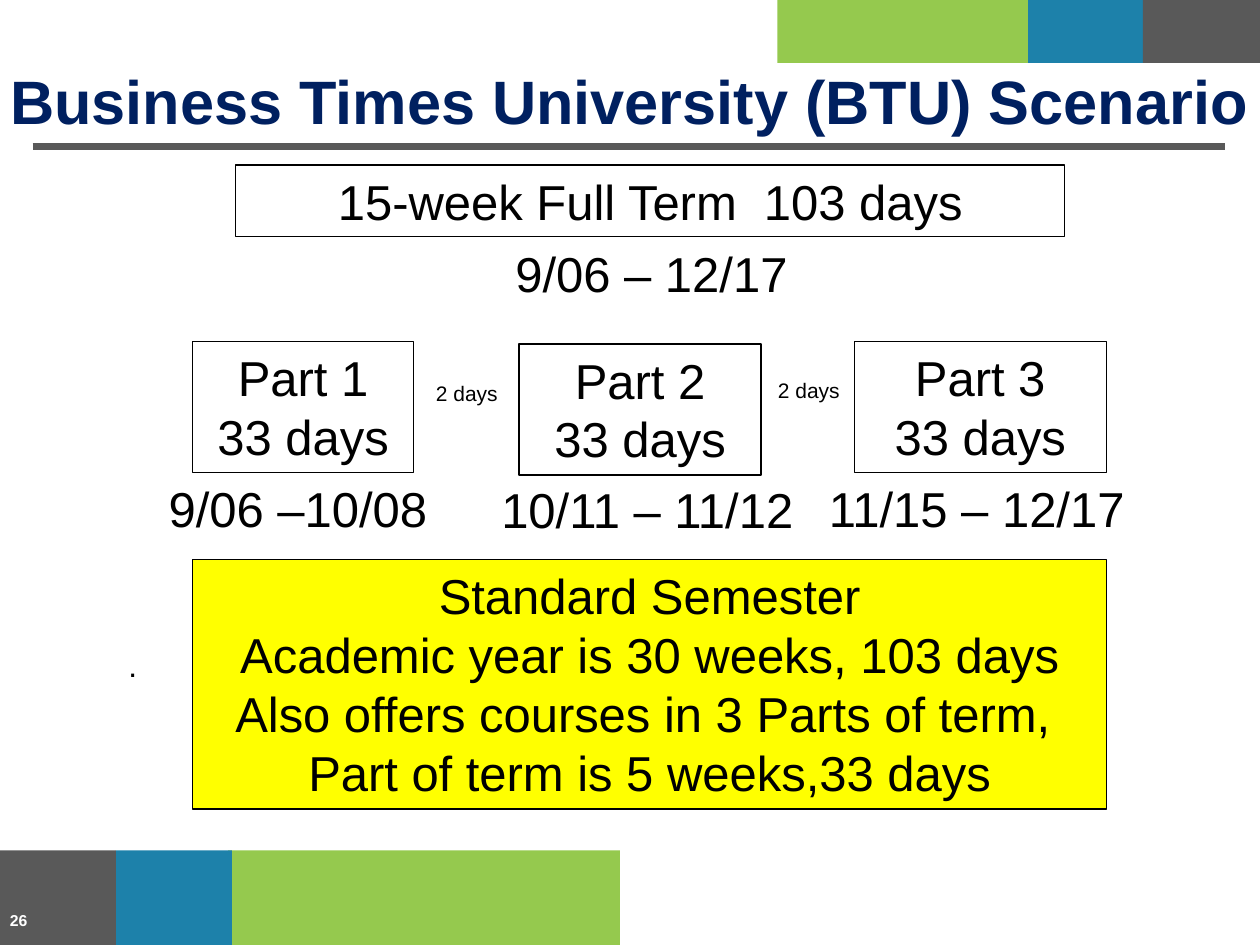
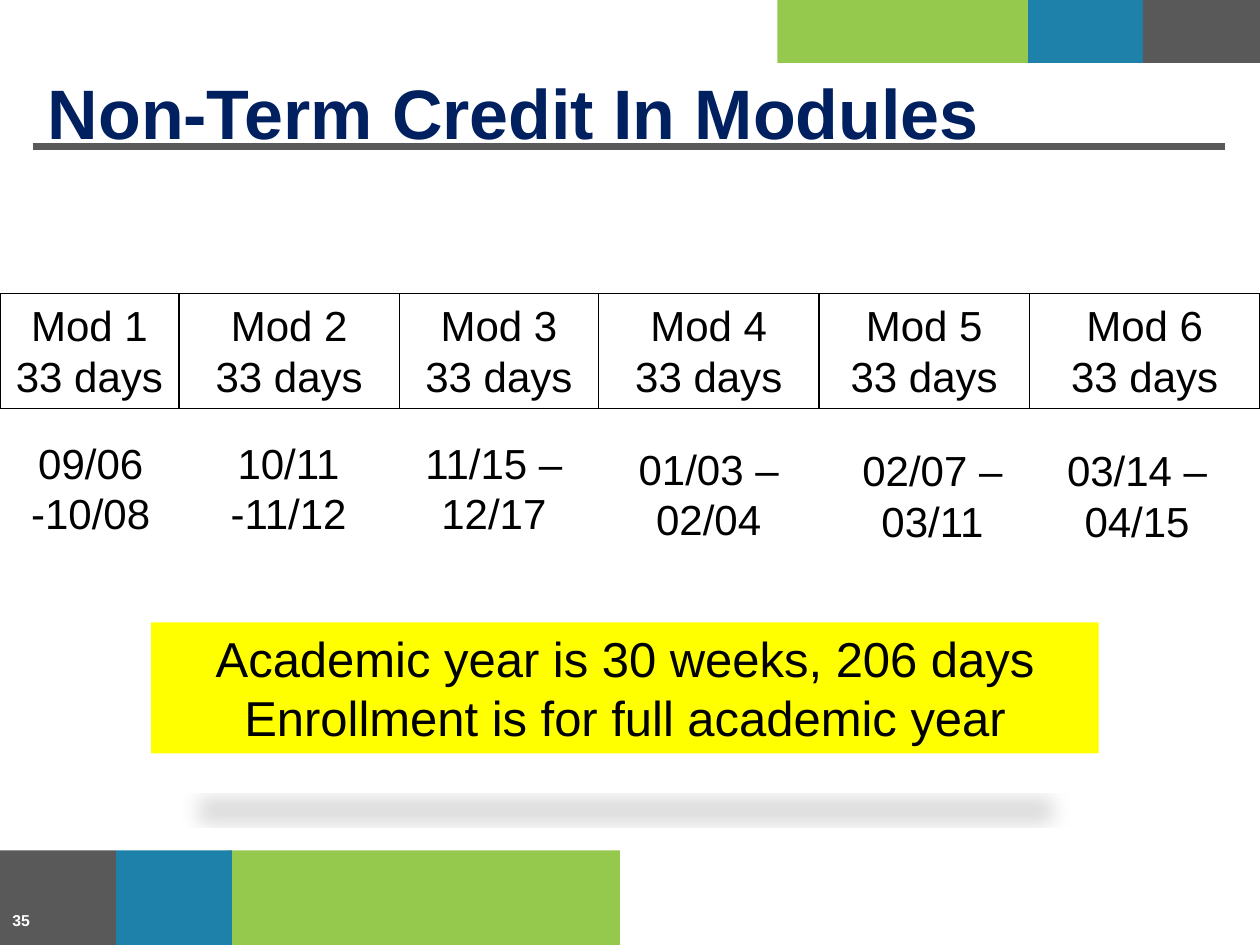
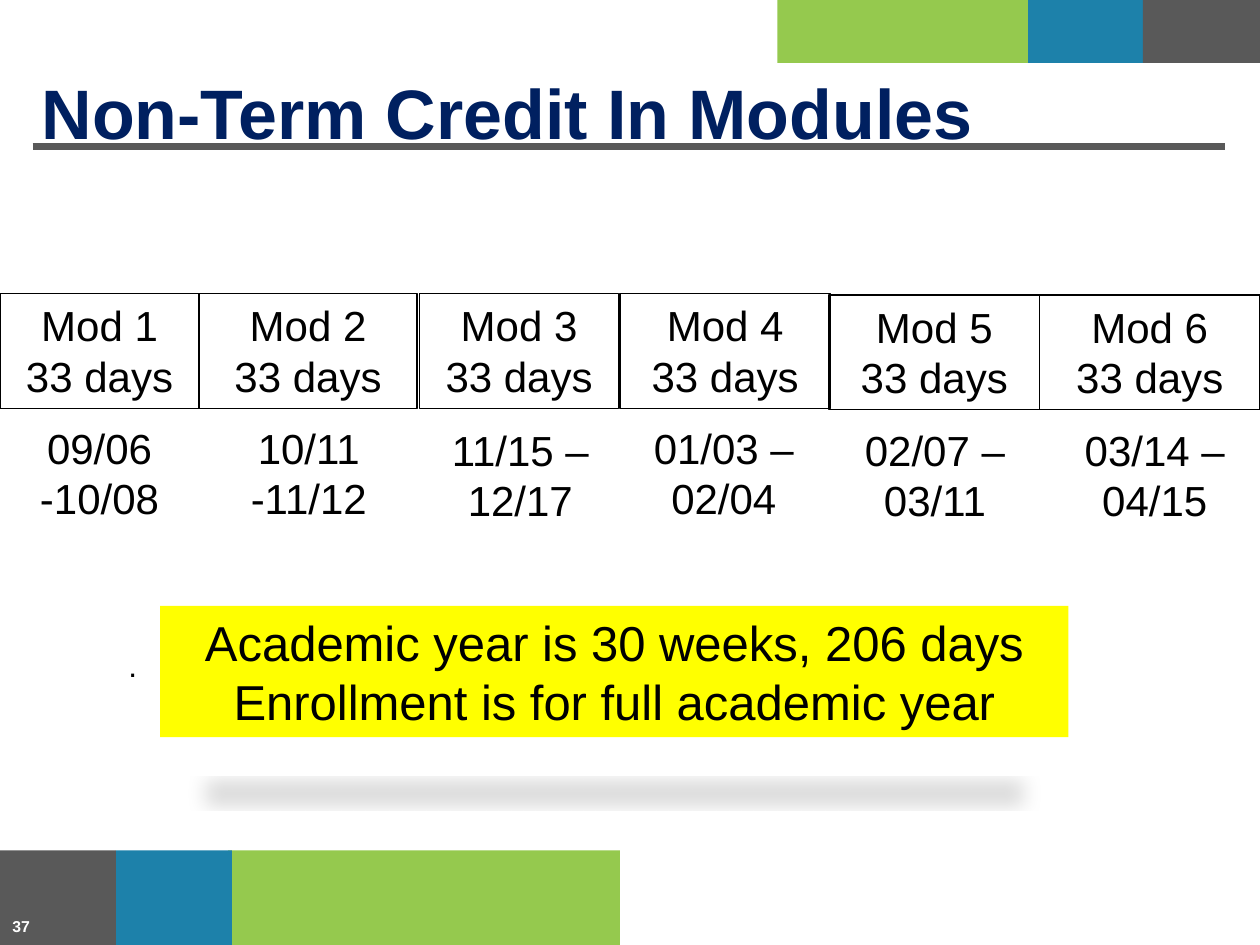
from lxml import etree
from pptx import Presentation
from pptx.dml.color import RGBColor
from pptx.enum import shapes as es, text as et
from pptx.oxml.ns import qn
from pptx.util import Inches, Pt

GREEN = RGBColor(0x95, 0xC9, 0x4E)
BLUE = RGBColor(0x1D, 0x81, 0xAA)
GRAY = RGBColor(0x59, 0x59, 0x59)
NAVY = RGBColor(0x00, 0x20, 0x60)
YELLOW = RGBColor(0xFF, 0xFF, 0x00)
BLACK = RGBColor(0, 0, 0)
WHITE = RGBColor(255, 255, 255)
FONT = "Arial"
PAD, LEAD = 0.1, 1.21  # box padding in inches, line height in font sizes

# Shared bands: left, top, width, height, colour
BANDS = [
    (1.81, 6.75, 3.11, 0.77, GREEN), (0.92, 6.75, 0.92, 0.77, BLUE),
    (-0.02, 6.75, 0.94, 0.77, GRAY), (6.17, 0, 2.02, 0.5, GREEN),
    (8.16, 0, 0.92, 0.5, BLUE), (9.07, 0, 0.94, 0.5, GRAY),
]

# Term scenario: text, left, top, width
PARTS = [
    ("Part 1\n33 days", 1.53, 2.71, 1.75),
    ("Part 2\n33 days", 4.12, 2.73, 1.92),
    ("15-week Full Term  103 days", 1.87, 1.31, 6.58),
    ("Part 3\n33 days", 6.78, 2.71, 2),
]
SPANS = [
    ("9/06 –10/08", 1.24, 3.75, 2.33),
    ("10/11 – 11/12", 3.88, 3.76, 2.58),
    ("11/15 – 12/17", 6.48, 3.75, 2.75),
]
GAPS = [("2 days", 3.29, 2.97, 0.83), ("2 days", 6.06, 2.95, 0.72)]
TERM = ("Standard Semester\nAcademic year is 30 weeks, 103 days\n"
        "Also offers courses in 3 Parts of term, \n"
        "Part of term is 5 weeks,33 days")

# Module slides: dates with their box width, then each slide's layout
DATES = [("09/06 -10/08", 1.42), ("10/11 -11/12", 1.62),
         ("11/15 – 12/17", 1.5), ("01/03 – 02/04", 1.33),
         ("02/07 – 03/11", 1.42), ("03/14 – 04/15", 1.83)]
YEAR = ("Academic year is 30 weeks, 206 days\n"
        "Enrollment is for full academic year")
MODS = [
    dict(page="35", foot=7.1, left=0.28, dot=False, note=(1.2, 4.94, 7.52),
         boxes=[(0, 2.33, 1.42), (1.42, 2.33, 1.75), (3.17, 2.33, 1.58),
                (4.75, 2.33, 1.75), (6.5, 2.33, 1.67), (8.17, 2.33, 1.83)],
         dates=[(0.01, 3.42), (1.48, 3.42), (3.17, 3.42),
                (4.96, 3.47), (6.69, 3.48), (8.11, 3.48)]),
    dict(page="37", foot=7.15, left=0.23, dot=True, note=(1.27, 4.81, 7.21),
         boxes=[(0, 2.33, 1.58), (1.58, 2.33, 1.73), (3.33, 2.33, 1.58),
                (4.92, 2.33, 1.67), (6.58, 2.34, 1.67), (8.25, 2.34, 1.75)],
         dates=[(0.08, 3.3), (1.64, 3.3), (3.38, 3.32),
                (5.08, 3.3), (6.71, 3.32), (8.25, 3.32)]),
]


def style(frame, words, size, color=BLACK, bold=False, align=et.PP_ALIGN.CENTER):
    frame.text = words
    frame.word_wrap = True
    for para in frame.paragraphs:
        para.alignment = align
        for run in para.runs:
            font = run.font
            font.name, font.size, font.bold = FONT, Pt(size), bold
            font.color.rgb = color


def rect(slide, left, top, wide, high, fill=None, line=None):
    box = slide.shapes.add_shape(es.MSO_SHAPE.RECTANGLE, Inches(left),
                                 Inches(top), Inches(wide), Inches(high))
    box.shadow.inherit = False
    if fill is None:
        box.fill.background()
    else:
        box.fill.solid()
        box.fill.fore_color.rgb = fill
    if line is None:
        box.line.fill.background()
    else:
        box.line.color.rgb = line
        box.line.width = Pt(0.75)
    return box


def tall(words, size, rows=None):
    rows = rows or words.count("\n") + 1
    return round(PAD + rows * size * LEAD / 72, 2)


def panel(slide, words, left, top, wide, size, fill=None, line=BLACK):
    box = rect(slide, left, top, wide, tall(words, size), fill, line)
    style(box.text_frame, words, size)
    box.text_frame.vertical_anchor = et.MSO_ANCHOR.TOP
    box.text_frame.auto_size = et.MSO_AUTO_SIZE.SHAPE_TO_FIT_TEXT
    return box


def label(slide, words, left, top, wide, size, high=None,
          align=et.PP_ALIGN.CENTER):
    box = slide.shapes.add_textbox(Inches(left), Inches(top), Inches(wide),
                                   Inches(high or tall(words, size)))
    style(box.text_frame, words, size, align=align)
    box.text_frame.auto_size = et.MSO_AUTO_SIZE.SHAPE_TO_FIT_TEXT


def dot(slide):
    label(slide, ".", 0.92, 5.08, 8.83, 18, 0.71, et.PP_ALIGN.LEFT)


def glow(box):
    """Add a soft, flattened shadow below the box."""
    effects = box.element.spPr.find(qn("a:effectLst"))
    shade = etree.SubElement(
        effects, qn("a:outerShdw"), blurRad="152400", dist="317500",
        dir="5400000", sx="90000", sy="-19000", rotWithShape="0")
    color = etree.SubElement(shade, qn("a:srgbClr"), val="000000")
    etree.SubElement(color, qn("a:alpha"), val="15000")


def dress(deck, slide):
    """Draw the bands and the title rule, then move them to the master."""
    marks = [rect(slide, *band) for band in BANDS]
    rule = slide.shapes.add_connector(es.MSO_CONNECTOR.STRAIGHT, Inches(0.26),
                                      Inches(1.16), Inches(9.72), Inches(1.16))
    rule.line.color.rgb = GRAY
    rule.line.width = Pt(4)
    etree.SubElement(rule.element.spPr, qn("a:effectLst"))
    tree = deck.slide_master.shapes.element
    for mark in marks + [rule]:
        tree.append(mark.element)


def start(deck, words, size, left, wide, inset, page, foot, edge):
    slide = deck.slides.add_slide(deck.slide_layouts[5])
    title = slide.shapes.title
    title.left, title.top = Inches(left), Inches(0.45)
    title.width, title.height = Inches(wide), Inches(0.71)
    frame = title.text_frame
    style(frame, words, size, NAVY, True, et.PP_ALIGN.LEFT)
    frame.auto_size = et.MSO_AUTO_SIZE.NONE
    frame.vertical_anchor = et.MSO_ANCHOR.TOP
    frame.margin_top = Inches(inset)
    # Page number
    box = slide.shapes.add_textbox(Inches(edge), Inches(foot),
                                   Inches(2.33), Inches(0.4))
    style(box.text_frame, page, 9, WHITE, True, et.PP_ALIGN.LEFT)
    box.text_frame.vertical_anchor = et.MSO_ANCHOR.MIDDLE
    return slide


def scenario(deck):
    slide = start(deck, "Business Times University (BTU) Scenario",
                  35, -0.02, 10.27, 0.05, "26", 7.1, -0.02)
    dress(deck, slide)
    for part in PARTS:
        panel(slide, *part, 28)
    dot(slide)
    for span in SPANS:
        label(slide, *span, 28, align=et.PP_ALIGN.LEFT)
    label(slide, "9/06 – 12/17", 2.92, 1.88, 4.5, 28)
    panel(slide, TERM, 1.53, 4.44, 7.25, 28, YELLOW)
    for gap in GAPS:
        label(slide, *gap, 12)


def modules(deck, plan):
    slide = start(deck, "Non-Term Credit In Modules", 40, plan["left"], 9.35,
                  0.1, plan["page"], plan["foot"], 0)
    for num, box in enumerate(plan["boxes"], 1):
        panel(slide, f"Mod {num}\n33 days", *box, 24)
    if plan["dot"]:
        dot(slide)
    for (words, wide), (left, top) in zip(DATES, plan["dates"]):
        label(slide, words, left, top, wide, 24, tall(words, 24, 2))
    glow(panel(slide, YEAR, *plan["note"], 28, YELLOW, None))


def main():
    deck = Presentation()
    deck.slide_width, deck.slide_height = Inches(10), Inches(7.5)
    scenario(deck)
    for plan in MODS:
        modules(deck, plan)
    deck.save("out.pptx")


if __name__ == "__main__":
    main()
